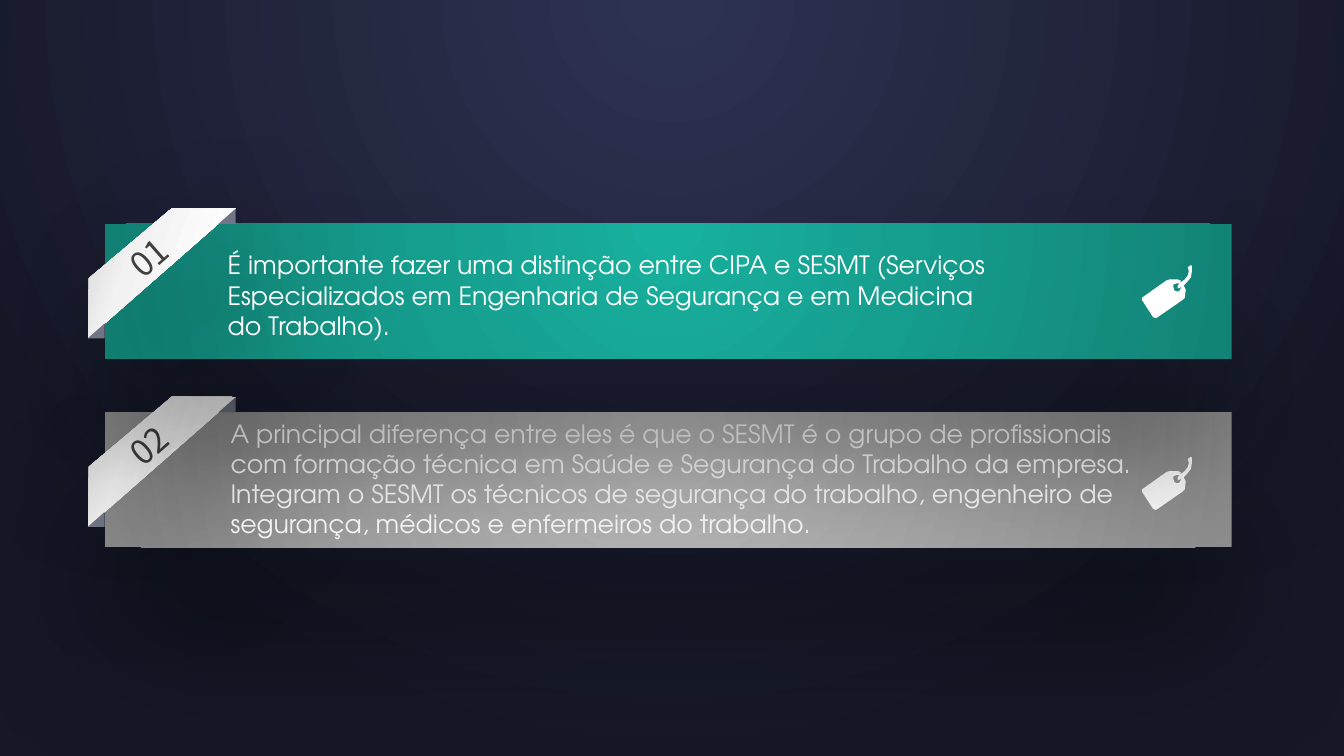
from lxml import etree
from pptx import Presentation
from pptx import util as u
from pptx.dml.color import RGBColor
from pptx.enum import shapes, text
from pptx.oxml import parse_xml
from pptx.oxml.ns import nsdecls, qn

SPOTLIGHT = ('<a:path {} path="circle"><a:fillToRect l="50000" t="-80000" '
             'r="50000" b="180000"/></a:path>').format(nsdecls("a"))
SLANTED = '<a:lin {} ang="3600000" scaled="0"/>'.format(nsdecls("a"))


def paint(owner, fill, stops, direction=None):
    """Fill with one hex colour, or with (percent, hex) stops along a direction."""
    if direction is None:
        fill.solid()
        fill.fore_color.rgb = RGBColor.from_string(stops)
        return
    fill.gradient()
    gradient = owner.element.find(".//" + qn("a:gradFill"))
    for child in list(gradient):
        gradient.remove(child)
    stop_list = etree.SubElement(gradient, qn("a:gsLst"))
    for percent, color in stops:
        stop = etree.SubElement(stop_list, qn("a:gs"), pos=str(percent * 1000))
        etree.SubElement(stop, qn("a:srgbClr"), val=color)
    gradient.append(parse_xml(direction))


def finish(shape, shadow=None):
    """Remove the outline and set an optional (distance in pt, degrees) shadow."""
    shape.line.fill.background()
    shape.shadow.inherit = False
    if shadow:
        distance, degrees = shadow
        effects = shape.element.spPr.find(qn("a:effectLst"))
        effects.append(parse_xml(
            f'<a:outerShdw {nsdecls("a")} blurRad="{u.Pt(100)}" dist="{u.Pt(distance)}" '
            f'dir="{degrees * 60000}" algn="t" rotWithShape="0">'
            '<a:srgbClr val="000000"><a:alpha val="40000"/></a:srgbClr></a:outerShdw>'))


presentation = Presentation()
presentation.slide_width = u.Cm(33.87)
presentation.slide_height = u.Cm(19.05)
slide = presentation.slides.add_slide(presentation.slide_layouts[6])
paint(slide, slide.background.fill, [(2, "2E3252"), (100, "161828")], SPOTLIGHT)

# Outlines: ribbon in hundredths of a cm, tag on a grid about 50 units wide
RIBBON = [(0, 114), (99, 0), (373, 0), (495, 104)]
TAG = [(49, 0), (50, 1), (50.5, 6), (49, 12), (45, 17), (42, 19.5), (44, 24),
       (43, 32), (41, 34.5), (15, 51.5), (12, 51), (1, 34.5), (1, 31.5), (25, 15),
       (28, 14), (36, 14), (39, 15), (39, 17), (43, 14), (46, 10), (47, 6), (46, 2)]
TAG_HOLE = [(38, 18), (35, 17.5), (32.5, 19), (31.5, 22), (33, 25), (36, 26),
            (38.5, 25), (39.5, 21), (37, 23), (35.5, 22), (36, 20)]

# Banners from back to front: number, top, colours, tag top, text box, wording
banners = [
    ("02", 10.39, "BFBFBF", "8F8F8F", 11.51, (5.56, 10.41, 23.22, 3.33),
     "A principal diferença entre eles é que o SESMT é o grupo de profissionais com "
     "formação técnica em Saúde e Segurança do Trabalho da empresa. Integram o SESMT "
     "os técnicos de segurança do trabalho, engenheiro de segurança, médicos e "
     "enfermeiros do trabalho."),
    ("01", 5.64, "18B09E", "128477", 6.68, (5.49, 6.17, 19.99, 2.57),
     "É importante fazer uma distinção entre CIPA e SESMT (Serviços Especializados em "
     "Engenharia de Segurança e em Medicina do Trabalho)."),
]

for number, top, inner, outer, tag_top, text_place, wording in banners:
    group = slide.shapes.add_group_shape().shapes

    # Bar
    bar = group.add_shape(shapes.MSO_SHAPE.RECTANGLE,
                          u.Cm(2.64), u.Cm(top), u.Cm(28.4), u.Cm(3.4))
    paint(bar, bar.fill, [(2, inner), (100, outer)], SPOTLIGHT)
    finish(bar, (71, 90))

    # Ribbon across the corner
    builder = group.build_freeform(*RIBBON[0], scale=u.Cm(1) / 100)
    builder.add_line_segments(RIBBON[1:])
    ribbon = builder.convert_to_shape(u.Cm(1.27), u.Cm(top + 0.28))
    ribbon.rotation = 319.9
    paint(ribbon, ribbon.fill, [(0, "BFBFBF"), (42, "F2F2F2"), (84, "FFFFFF")], SLANTED)
    finish(ribbon, (46, 45))

    # Ribbon folds
    for left, offset in [(2.21, 2.51), (5.51, -0.38)]:
        fold = group.add_shape(shapes.MSO_SHAPE.RIGHT_TRIANGLE,
                               u.Cm(left), u.Cm(top + offset), u.Cm(0.43), u.Cm(0.38))
        fold.element.spPr.find(qn("a:xfrm")).set("flipH", "1")
        paint(fold, fold.fill, "727586")
        finish(fold)

    # Tag icon
    builder = group.build_freeform(*TAG[0], scale=u.Cm(1.3) / 50.5)
    builder.add_line_segments(TAG[1:])
    builder.move_to(*TAG_HOLE[0])
    builder.add_line_segments(TAG_HOLE[1:])
    tag = builder.convert_to_shape(u.Cm(28.75), u.Cm(tag_top))
    paint(tag, tag.fill, "FFFFFF")
    finish(tag)

    # Number and wording
    for place, words, size, font_name, color in [
            ((1.78, top + 0.2, 3.94, 1.27), number, 24, "Noto Sans CJK SC", "404040"),
            (text_place, wording, 18, "TeX Gyre Adventor", "FFFFFF")]:
        box = group.add_textbox(*[u.Cm(length) for length in place])
        frame = box.text_frame
        frame.word_wrap = True
        frame.text = words
        font = frame.paragraphs[0].runs[0].font
        font.size = u.Pt(size)
        font.name = font_name
        font.color.rgb = RGBColor.from_string(color)
        if words == number:
            box.rotation = 318.8
            frame.vertical_anchor = text.MSO_ANCHOR.MIDDLE
            frame.paragraphs[0].alignment = text.PP_ALIGN.CENTER

presentation.save("out.pptx")
